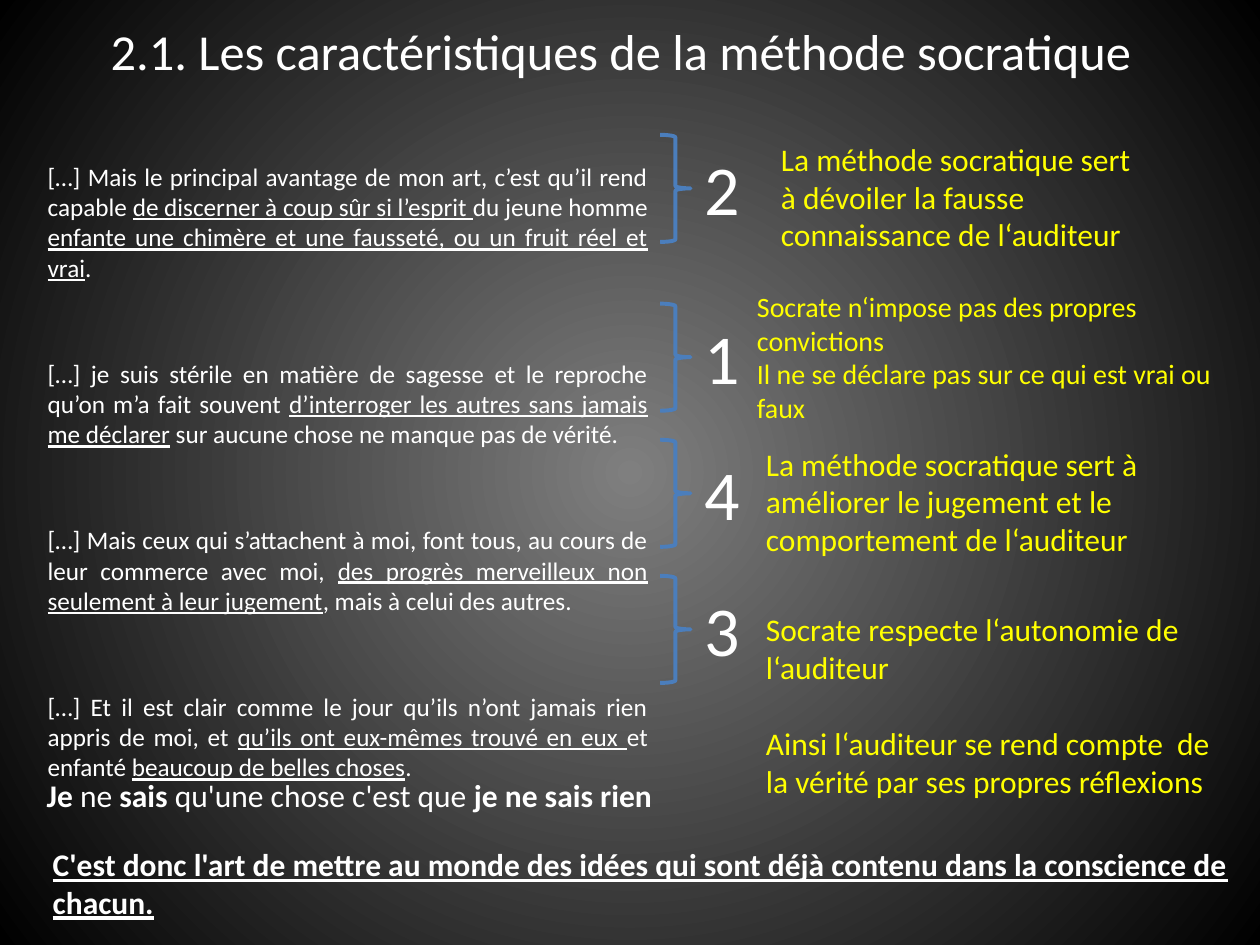
from lxml.etree import SubElement
from pptx import Presentation
from pptx.dml.color import RGBColor
from pptx.enum.shapes import MSO_SHAPE as Shape
from pptx.enum.text import MSO_ANCHOR as Anchor, MSO_AUTO_SIZE as AutoSize, PP_ALIGN as Align
from pptx.oxml.ns import qn
from pptx.util import Inches, Pt

WHITE = RGBColor(0xFF, 0xFF, 0xFF)
YELLOW = RGBColor(0xFF, 0xFF, 0x00)
BLUE = RGBColor(0x4B, 0x7E, 0xBC)
GRAY = RGBColor(0x7F, 0x7F, 0x7F)
BLACK = RGBColor(0x00, 0x00, 0x00)

TITLE = "2.1. Les caractéristiques de la méthode socratique"

# A paragraph is a list of runs: a plain string, or a pair of text and format
UNDERLINE, BOLD = {"underline": True}, {"bold": True}
QUOTES = [
    ["[…] Mais le principal avantage de mon art, c’est qu’il rend capable ",
     ("de discerner à coup sûr si l’esprit ", UNDERLINE), "du jeune homme ",
     ("enfante une chimère et une fausseté, ou un fruit réel et vrai", UNDERLINE), "."],
    ["[…] je suis stérile en matière de sagesse et le reproche qu’on m’a fait souvent ",
     ("d’interroger les autres sans jamais me déclarer", UNDERLINE),
     " sur aucune chose ne manque pas de vérité."],
    ["[…] Mais ceux qui s’attachent à moi, font tous, au cours de leur commerce avec moi, ",
     ("des progrès merveilleux non seulement à leur jugement", UNDERLINE),
     ", mais à celui des autres."],
    ["[…] Et il est clair comme le jour qu’ils n’ont jamais rien appris de moi, et ",
     ("qu’ils ont eux-mêmes trouvé en eux ", UNDERLINE), "et enfanté ",
     ("beaucoup de belles choses", UNDERLINE), "."],
]
MAXIM = [[("Je", BOLD), " ne ", ("sais", BOLD), " qu'une chose c'est que ",
          ("je ne sais rien", BOLD)]]
CONCLUSION = [[("C'est donc l'art de mettre au monde des idées qui sont déjà contenu "
                "dans la conscience de chacun.", BOLD | UNDERLINE)]]

# Each row: top of the brace, number, box of the comment, size, gap, paragraphs
BRACE_LEFT, BRACE_WIDTH, BRACE_HEIGHT = 5.24, 0.24, 0.85
ROWS = [
    (1.07, "2", (6.1, 1.06, 3.07, 1.01), 18, 0,
     [["La méthode socratique sert à dévoiler la fausse connaissance de l‘auditeur"]]),
    (2.41, "1", (5.91, 2.25, 4, 1.18), 16, 0,
     [["Socrate n‘impose pas des propres convictions"],
      ["Il ne se déclare pas sur ce qui est vrai ou faux"]]),
    (3.49, "4", (5.98, 3.48, 4.02, 1.01), 18, 0,
     [["La méthode socratique sert à améliorer le jugement et le comportement de l‘auditeur"]]),
    (4.57, "3", (5.98, 4.79, 3.82, 1.62), 18, 22,
     [["Socrate respecte l‘autonomie de l‘auditeur"],
      ["Ainsi l‘auditeur se rend compte  de la vérité par ses propres réflexions"]]),
]


def apply_format(target, values):
    for name, value in values.items():
        setattr(target, name, value)


def write_paragraphs(frame, paragraphs, size, color, gap=0, align=Align.LEFT):
    for index, runs in enumerate(paragraphs):
        paragraph = frame.paragraphs[0] if index == 0 else frame.add_paragraph()
        apply_format(paragraph, {"alignment": align, "space_before": Pt(gap if index else 0)})
        for item in runs:
            text, extra = (item, {}) if isinstance(item, str) else item
            run = paragraph.add_run()
            run.text = text
            apply_format(run.font, {"name": "Calibri", "size": Pt(size)} | extra)
            run.font.color.rgb = color


def add_text(slide, box, paragraphs, size, color, gap=0, align=Align.LEFT, **frame_format):
    frame = slide.shapes.add_textbox(*map(Inches, box)).text_frame
    apply_format(frame, {"word_wrap": True, "auto_size": AutoSize.NONE} | frame_format)
    write_paragraphs(frame, paragraphs, size, color, gap, align)


def paint_background(slide):
    fill = slide.background.fill
    fill.gradient()
    for stop, color, position in zip(fill.gradient_stops, (GRAY, BLACK), (0, 1)):
        stop.color.rgb = color
        stop.position = position
    # Turn the linear gradient into one that spreads from the centre
    gradient = slide.element.find(".//" + qn("a:gradFill"))
    gradient.remove(gradient.find(qn("a:lin")))
    circle = SubElement(gradient, qn("a:path"), path="circle")
    SubElement(circle, qn("a:fillToRect"), dict.fromkeys("ltrb", "50000"))


def place_title(slide, box):
    title = slide.shapes.title
    apply_format(title, dict(zip(("left", "top", "width", "height"), map(Inches, box))))
    apply_format(title.text_frame, {"vertical_anchor": Anchor.MIDDLE, "word_wrap": True,
                                    "auto_size": AutoSize.NONE})
    write_paragraphs(title.text_frame, [[TITLE]], 28.8, WHITE, align=Align.CENTER)


def add_numbered_brace(slide, top, number):
    box = (BRACE_LEFT, top, BRACE_WIDTH, BRACE_HEIGHT)
    brace = slide.shapes.add_shape(Shape.RIGHT_BRACE, *map(Inches, box))
    brace.shadow.inherit = False
    brace.fill.background()
    brace.line.color.rgb = BLUE
    brace.line.width = Pt(2.25)
    add_text(slide, (BRACE_LEFT + 0.25, top + 0.04, 0.3, 0.77), [[number]], 40, WHITE,
             auto_size=AutoSize.SHAPE_TO_FIT_TEXT)


def main():
    presentation = Presentation()
    presentation.slide_width, presentation.slide_height = Inches(10), Inches(7.5)
    slide = presentation.slides.add_slide(presentation.slide_layouts[5])
    paint_background(slide)
    place_title(slide, (0.43, 0.05, 9, 0.7))

    # Quotations on the left, comments on the right
    add_text(slide, (0.28, 1.23, 4.96, 4.25), QUOTES, 14.4, WHITE, 43.3, Align.JUSTIFY)
    for top, number, box, size, gap, comment in ROWS:
        add_numbered_brace(slide, top, number)
        add_text(slide, box, comment, size, YELLOW, gap)

    # Closing lines
    add_text(slide, (0.22, 6.11, 5.12, 0.4), MAXIM, 18, WHITE,
             word_wrap=False, margin_left=Inches(0.15))
    add_text(slide, (0.32, 6.66, 9.59, 0.71), CONCLUSION, 18, WHITE)
    presentation.save("out.pptx")


if __name__ == "__main__":
    main()
